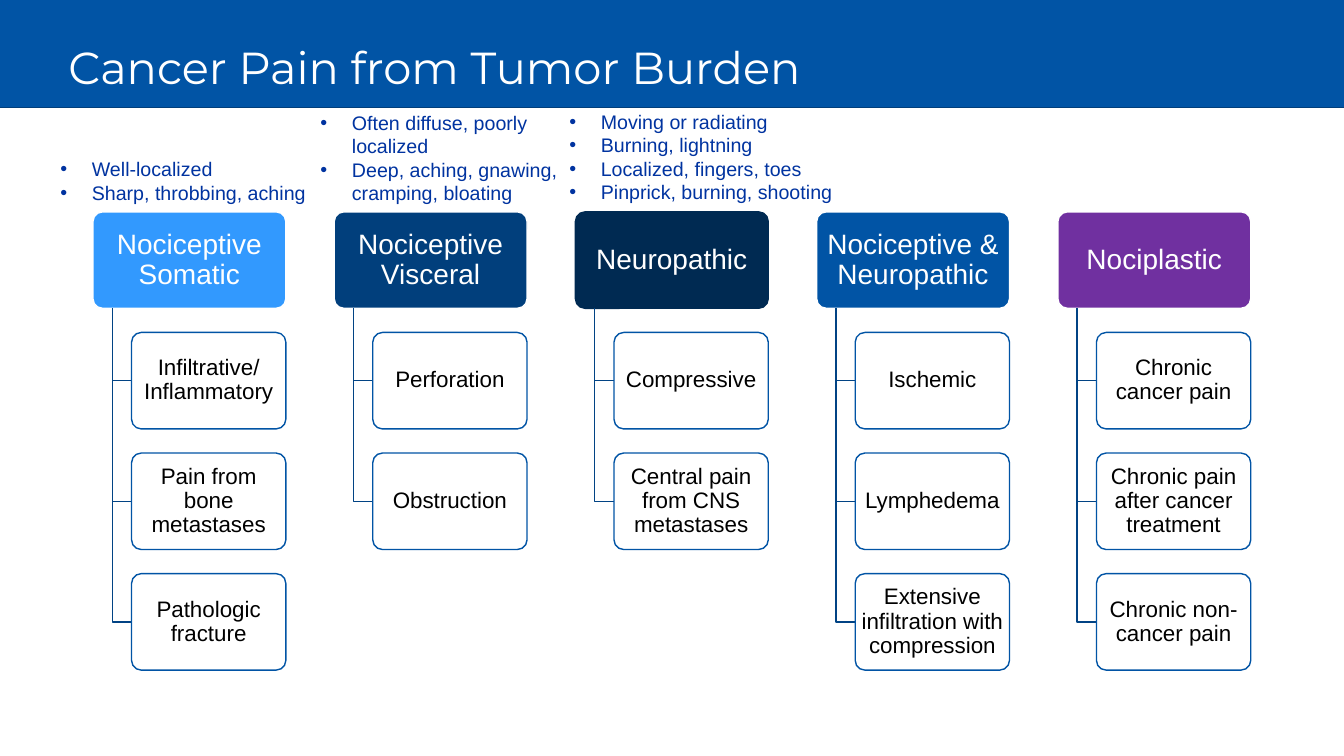
from lxml import etree
from pptx import Presentation
from pptx.dml.color import RGBColor
from pptx.enum.shapes import MSO_SHAPE
from pptx.enum.text import MSO_ANCHOR, PP_ALIGN
from pptx.oxml.ns import qn
from pptx.util import Pt

RECTANGLE, ROUNDED = MSO_SHAPE.RECTANGLE, MSO_SHAPE.ROUNDED_RECTANGLE
MIDDLE, CENTER = MSO_ANCHOR.MIDDLE, PP_ALIGN.CENTER

# Content
TITLE = "Cancer Pain from Tumor Burden"
PAIN_TYPES = [
    # heading, fill, outline, causes
    ("Nociceptive Somatic", "sky", "white",
     ["Infiltrative/ Inflammatory", "Pain from bone metastases", "Pathologic fracture"]),
    ("Nociceptive Visceral", "navy", "white", ["Perforation", "Obstruction"]),
    ("Neuropathic", "midnight", "midnight",
     ["Compressive", "Central pain from CNS metastases"]),
    ("Nociceptive & Neuropathic", "blue", "white",
     ["Ischemic", "Lymphedema", "Extensive infiltration with compression"]),
    ("Nociplastic", "purple", "white",
     ["Chronic cancer pain", "Chronic pain after cancer treatment",
      "Chronic non-cancer pain"]),
]
SYMPTOMS = [
    # left, top, width, height, lines
    (221.8, 75.6, 196.6, 74.9, ["Often diffuse, poorly localized",
                                "Deep, aching, gnawing, cramping, bloating"]),
    (36, 108.7, 216, 41, ["Well-localized", "Sharp, throbbing, aching"]),
    (399.6, 74.9, 216, 74.9, ["Moving or radiating", "Burning, lightning",
                              "Localized, fingers, toes", "Pinprick, burning, shooting"]),
]
COLORS = {
    "white": "FFFFFF", "black": "000000", "blue": "0154A5", "band_line": "013E7A",
    "sky": "3299FE", "navy": "013F7C", "midnight": "002A52", "purple": "7030A0",
    "branch": "014384", "symptom": "0033A0",
}

# Grid, in points
FIRST_LEFT, COLUMN_STEP = 66.4, 172.3
HEADING_TOP, ROW_STEP = 151.3, 86.15
HEADING_WIDTH, CAUSE_WIDTH, BOX_HEIGHT = 137.8, 110.2, 68.9
TRUNK_INDENT, CAUSE_INDENT = 13.8, 27.6
BULLET_INDENT = 22.5

presentation = Presentation()
presentation.slide_width, presentation.slide_height = Pt(960), Pt(540)
slide = presentation.slides.add_slide(presentation.slide_layouts[6])


def color(name):
    return RGBColor.from_string(COLORS[name])


def style_font(paragraph, size, name, font_name="Arial"):
    font = paragraph.font
    font.size, font.name = Pt(size), font_name
    font.color.rgb = color(name)


def set_line(shape, name):
    shape.shadow.inherit = False
    shape.line.color.rgb = color(name)
    shape.line.width = Pt(1)


def add_box(kind, left, top, width, height, fill, outline):
    shape = slide.shapes.add_shape(kind, Pt(left), Pt(top), Pt(width), Pt(height))
    shape.fill.solid()
    shape.fill.fore_color.rgb = color(fill)
    set_line(shape, outline)
    return shape


def add_label_box(text, left, top, width, fill, outline, size, text_color, insets):
    shape = add_box(ROUNDED, left, top, width, BOX_HEIGHT, fill, outline)
    shape.adjustments[0] = 0.1
    frame = shape.text_frame
    frame.word_wrap = True
    frame.vertical_anchor = MIDDLE
    frame.margin_left = frame.margin_right = Pt(insets[0])
    frame.margin_top = frame.margin_bottom = Pt(insets[1])
    frame.text = text
    paragraph = frame.paragraphs[0]
    paragraph.alignment = CENTER
    paragraph.line_spacing = 0.9
    style_font(paragraph, size, text_color)


def add_text_box(left, top, width, height):
    box = slide.shapes.add_textbox(Pt(left), Pt(top), Pt(width), Pt(height))
    box.text_frame.word_wrap = True
    return box.text_frame


def add_bullet(paragraph):
    properties = paragraph._p.get_or_add_pPr()
    properties.set("marL", str(Pt(BULLET_INDENT)))
    properties.set("indent", str(-Pt(BULLET_INDENT)))
    etree.SubElement(properties, qn("a:buFont")).set("typeface", "Arial")
    etree.SubElement(properties, qn("a:buChar")).set("char", "•")


# Title band
add_box(RECTANGLE, -22.3, -17.3, 1000, 94.3, "blue", "band_line")
title_frame = add_text_box(41.8, 24.5, 828, 50.4)
title_frame.vertical_anchor = MIDDLE
title_frame.text = TITLE
title_frame.paragraphs[0].line_spacing = 0.9
style_font(title_frame.paragraphs[0], 32, "white", "Montserrat")

# Pain types with their causes
for column, (heading, fill, outline, causes) in enumerate(PAIN_TYPES):
    left = FIRST_LEFT + column * COLUMN_STEP
    add_label_box(heading, left, HEADING_TOP, HEADING_WIDTH, fill, outline,
                  20, "white", (3, 2))
    trunk_x, cause_left = left + TRUNK_INDENT, left + CAUSE_INDENT
    for row, cause in enumerate(causes, start=1):
        top = HEADING_TOP + row * ROW_STEP
        middle = top + BOX_HEIGHT / 2
        builder = slide.shapes.build_freeform(Pt(trunk_x), Pt(HEADING_TOP + BOX_HEIGHT))
        builder.add_line_segments([(Pt(trunk_x), Pt(middle)),
                                   (Pt(cause_left), Pt(middle))], close=False)
        branch = builder.convert_to_shape()
        branch.fill.background()
        set_line(branch, "branch")
        add_label_box(cause, cause_left, top, CAUSE_WIDTH, "white", "blue",
                      16, "black", (2.2, 1.5))

# Symptom lists
for left, top, width, height, lines in SYMPTOMS:
    frame = add_text_box(left, top, width, height)
    frame.text = "\n".join(lines)
    for paragraph in frame.paragraphs:
        add_bullet(paragraph)
        style_font(paragraph, 14, "symptom")

presentation.save("out.pptx")
